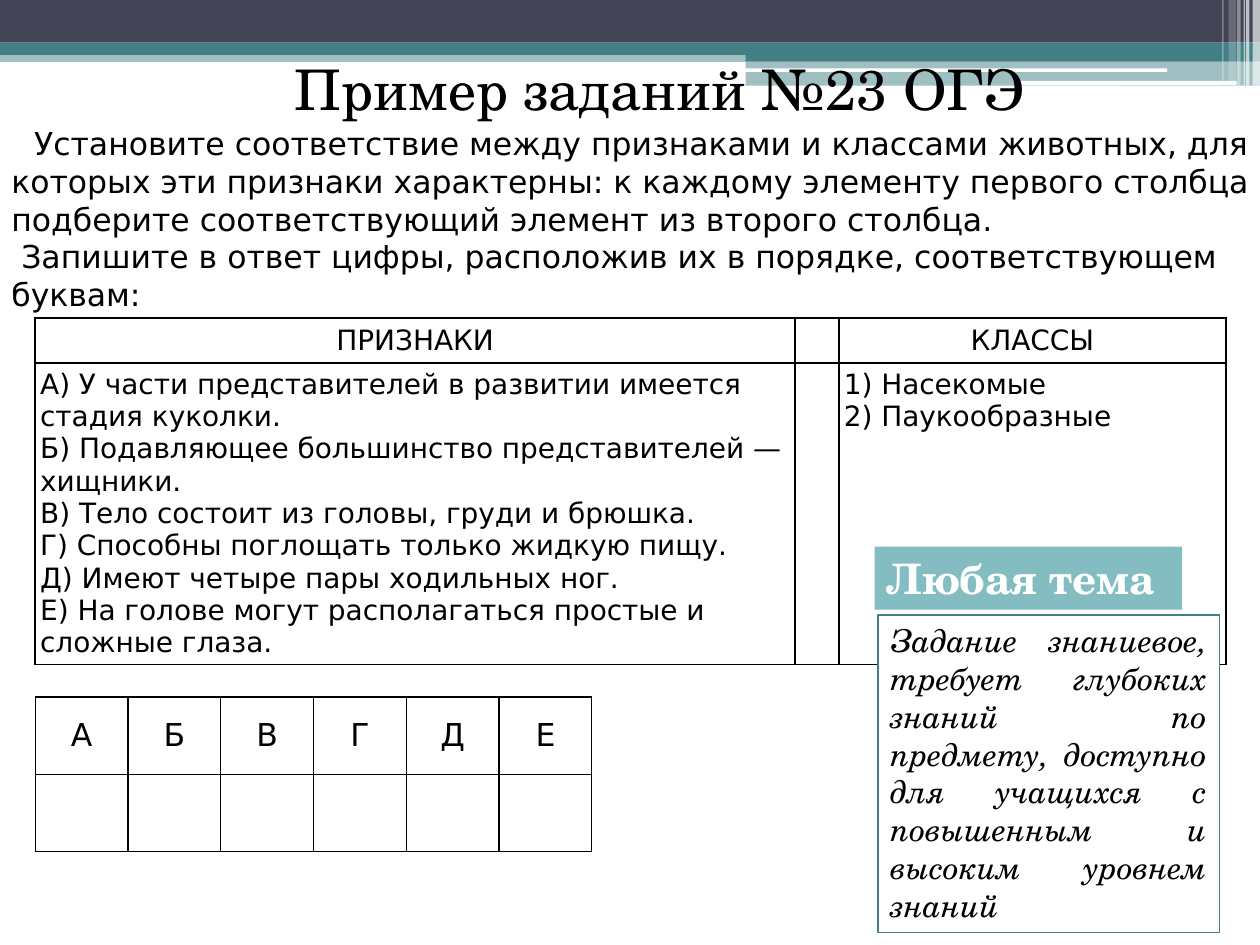
from lxml import etree
from pptx import Presentation
from pptx.dml.color import RGBColor
from pptx.enum.shapes import MSO_SHAPE
from pptx.enum.text import MSO_ANCHOR, PP_ALIGN
from pptx.oxml.ns import qn
from pptx.util import Cm, Pt

RECT, ROUNDED = MSO_SHAPE.RECTANGLE, MSO_SHAPE.ROUNDED_RECTANGLE
TOP, MIDDLE = MSO_ANCHOR.TOP, MSO_ANCHOR.MIDDLE
LEFT, CENTER, JUSTIFY = PP_ALIGN.LEFT, PP_ALIGN.CENTER, PP_ALIGN.JUSTIFY
SANS, SERIF = "DejaVu Sans", "TeX Gyre Schola"
COLORS = {"ink": "000000", "paper": "FFFFFF", "navy": "424456",
          "teal": "438086", "light_teal": "83BCC1"}

prs = Presentation()
prs.slide_width, prs.slide_height = Cm(25.4), Cm(19.05)
slide = prs.slides.add_slide(prs.slide_layouts[6])


def write(frame, text, size=18, font=SANS, color="ink", bold=False, italic=False,
          align=LEFT, anchor=TOP, indents=()):
    """Fill a text frame, one paragraph per line of text."""
    frame.word_wrap = True
    frame.vertical_anchor = anchor
    for i, line in enumerate(text.split("\n")):
        paragraph = frame.paragraphs[0] if i == 0 else frame.add_paragraph()
        paragraph.alignment = align
        if indents:
            paragraph._p.get_or_add_pPr().set("indent", str(Cm(indents[i])))
        run = paragraph.add_run()
        run.text = line
        run.font.size, run.font.name = Pt(size), font
        run.font.bold, run.font.italic = bold, italic
        run.font.color.rgb = RGBColor.from_string(COLORS[color])


def block(left, top, width, height, color, opacity=100, kind=RECT):
    """Add a plain filled shape without outline."""
    shape = slide.shapes.add_shape(kind, Cm(left), Cm(top), Cm(width), Cm(height))
    shape.shadow.inherit = False
    shape.fill.solid()
    shape.fill.fore_color.rgb = RGBColor.from_string(COLORS[color])
    shape.line.fill.background()
    if opacity < 100:
        rgb = shape.fill._xPr.find(".//" + qn("a:srgbClr"))
        etree.SubElement(rgb, qn("a:alpha"), val=str(opacity * 1000))
    return shape


# Header bands
for left, top, width, height, color, opacity in [
        (0, 1.02, 25.4, 0.23, "teal", 50),
        (0, 0, 25.4, 0.86, "navy", 100),
        (0, 0.86, 25.4, 0.25, "teal", 100),
        (15.03, 0.99, 10.37, 0.24, "teal", 100),
        (15.03, 1.23, 10.37, 0.5, "teal", 50)]:
    block(left, top, width, height, color, opacity)
for left, top, width, height in [(15.02, 1.38, 8.51, 0.07), (20.48, 1.63, 4.45, 0.09)]:
    block(left, top, width, height, "paper", kind=ROUNDED)

# Translucent stripes in the corner
for left, width, height, opacity in [
        (25.25, 0.15, 1.73, 65), (25.12, 0.07, 1.73, 65), (25.07, 0.03, 1.73, 60),
        (24.94, 0.07, 1.73, 40), (24.77, 0.15, 1.63, 20), (24.64, 0.03, 1.63, 30)]:
    block(left, 0, width, height, "paper", opacity)

# Matching table and answer grid
features = "\n".join([
    "А) У части представителей в развитии имеется стадия куколки.",
    "Б) Подавляющее большинство представителей — хищники.",
    "В) Тело состоит из головы, груди и брюшка.",
    "Г) Способны поглощать только жидкую пищу.",
    "Д) Имеют четыре пары ходильных ног.",
    "Е) На голове могут располагаться простые и сложные глаза."])
matching = [["ПРИЗНАКИ", "", "КЛАССЫ"],
            [features, "", "1) Насекомые\n2) Паукообразные"]]
answers = [list("АБВГДЕ"), [""] * 6]

for rows, top, widths, heights, size, border in [
        (matching, 6.41, [15.32, 0.88, 7.8], [0.85, 6.07], 16, 1),
        (answers, 14.05, [1.87] * 6, [1.56] * 2, 18, 0.75)]:
    grid = slide.shapes.add_table(len(rows), len(widths), Cm(0.71), Cm(top),
                                  Cm(sum(widths)), Cm(sum(heights))).table
    grid.first_row = grid.horz_banding = False
    for column, width in zip(grid.columns, widths):
        column.width = Cm(width)
    for r, (row, height) in enumerate(zip(rows, heights)):
        grid.rows[r].height = Cm(height)
        for c, text in enumerate(row):
            cell = grid.cell(r, c)
            cell.margin_left = cell.margin_right = Cm(0.1)
            cell.margin_top = cell.margin_bottom = Cm(0.1)
            cell.vertical_anchor = TOP if r else MIDDLE
            write(cell.text_frame, text, size=size, align=LEFT if r else CENTER,
                  anchor=None)
            properties = cell._tc.get_or_add_tcPr()
            for side in ("lnL", "lnR", "lnT", "lnB"):
                edge = etree.SubElement(properties, qn("a:" + side), w=str(Pt(border)))
                ink = etree.SubElement(edge, qn("a:solidFill"))
                etree.SubElement(ink, qn("a:srgbClr"), val=COLORS["ink"])
            cell.fill.background()

# Task statement
task = block(0.23, 2.36, 24.98, 3.96, "paper").text_frame
task.margin_left = task.margin_right = task.margin_bottom = 0
task.margin_top = Cm(0.13)
write(task, "Установите соответствие между признаками и классами животных, для которых "
      "эти признаки характерны: к каждому элементу первого столбца подберите "
      "соответствующий элемент из второго столбца.\n"
      "Запишите в ответ цифры, расположив их в порядке, соответствующем буквам:",
      anchor=MIDDLE, indents=(0.46, 0.2))

# Topic label
topic = block(17.63, 11.02, 6.2, 1.27, "light_teal")
write(topic.text_frame, "Любая тема", size=24, font=SERIF, color="paper", bold=True)

# Title
title = slide.shapes.add_textbox(Cm(-0.1), Cm(0.97), Cm(26.8), Cm(1.63))
write(title.text_frame, "Пример заданий №23 ОГЭ", size=32, font=SERIF, align=CENTER)

# Comment on difficulty
comment = block(17.7, 12.4, 6.88, 6.4, "paper")
comment.line.color.rgb = RGBColor.from_string(COLORS["teal"])
comment.line.width = Pt(0.75)
write(comment.text_frame, "Задание знаниевое, требует глубоких знаний по предмету, "
      "доступно для учащихся с повышенным и высоким уровнем знаний",
      font=SERIF, italic=True, align=JUSTIFY)

prs.save("out.pptx")
